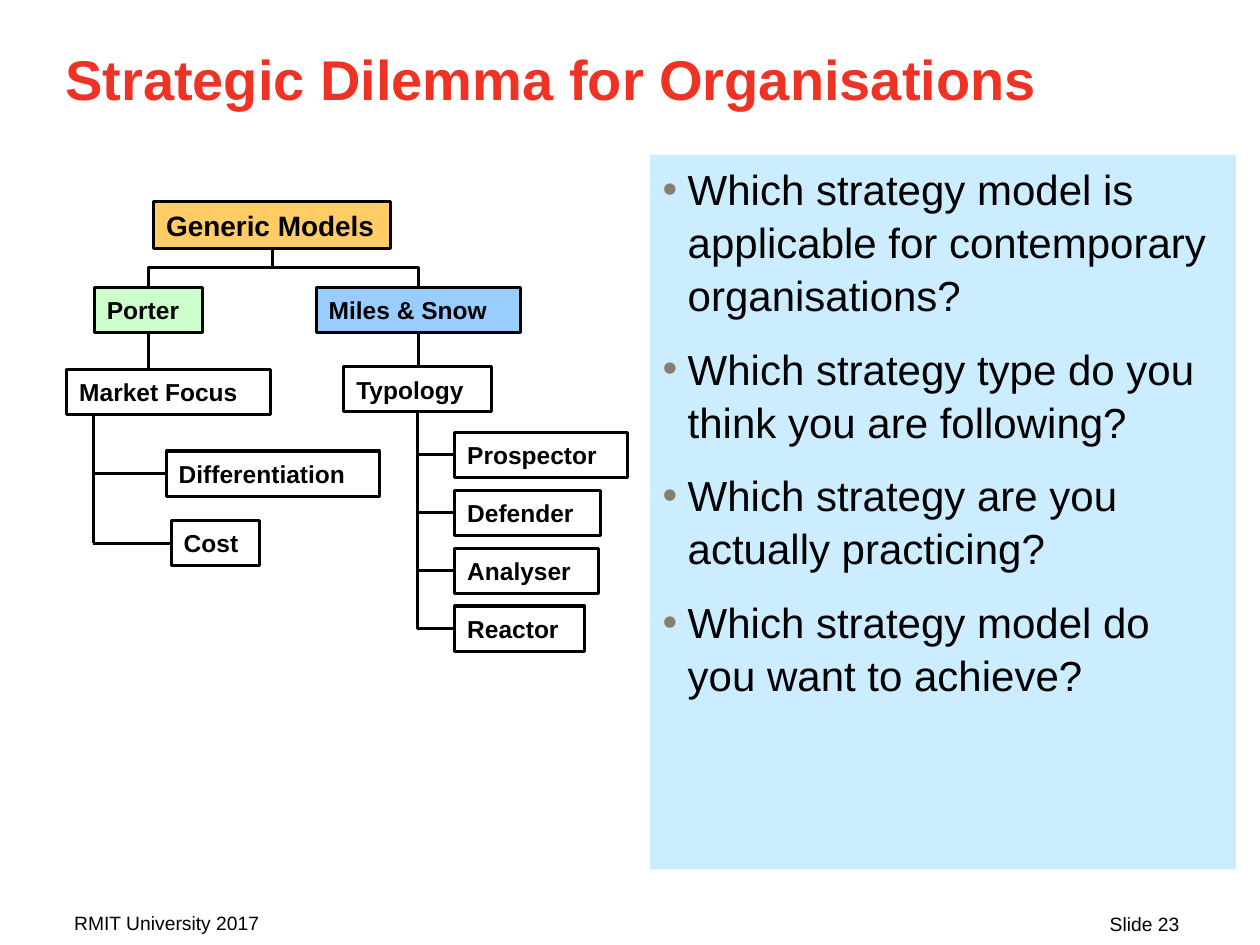
from lxml import etree
from pptx import Presentation
from pptx.dml.color import RGBColor
from pptx.enum.shapes import MSO_CONNECTOR, MSO_SHAPE
from pptx.enum.text import MSO_ANCHOR, PP_ALIGN
from pptx.oxml.ns import qn
from pptx.util import Inches, Pt

STRAIGHT, ELBOW = MSO_CONNECTOR.STRAIGHT, MSO_CONNECTOR.ELBOW
RECTANGLE = MSO_SHAPE.RECTANGLE
TOP, MIDDLE = MSO_ANCHOR.TOP, MSO_ANCHOR.MIDDLE
LEFT, RIGHT = PP_ALIGN.LEFT, PP_ALIGN.RIGHT
TOP_SITE, LEFT_SITE, BOTTOM_SITE = 0, 1, 2

BLACK = RGBColor(0x00, 0x00, 0x00)
WHITE = RGBColor(0xFF, 0xFF, 0xFF)
RED = RGBColor(0xEE, 0x32, 0x24)
ORANGE = RGBColor(0xFF, 0xCC, 0x66)
GREEN = RGBColor(0xCC, 0xFF, 0xCC)
BLUE = RGBColor(0x99, 0xCC, 0xFF)
PALE_BLUE = RGBColor(0xCC, 0xEC, 0xFF)
BULLET_GREY = RGBColor(0x88, 0x7E, 0x6E)

QUESTIONS = [
    "Which strategy model is applicable for contemporary organisations?",
    "Which strategy type do you think you are following?",
    "Which strategy are you actually practicing?",
    "Which strategy model do you want to achieve?",
]
TYPES = [("Prospector", 1.37), ("Defender", 1.16), ("Analyser", 1.14), ("Reactor", 1.03)]
FOCUSES = [("Differentiation", 1.32, 3.58, 1.69), ("Cost", 1.36, 4.13, 0.7)]
BOX_HEIGHT = 0.36
TRUNK_X = 0.74


def write(para, text, size=14, color=BLACK, bold=False, align=LEFT):
    """Put formatted text into a paragraph."""
    para.alignment = align
    para.font.name = "Arial"
    para.font.size = Pt(size)
    para.font.bold = bold
    para.font.color.rgb = color
    para.add_run().text = text


def add_label(page, text, left, top, width, height, **text_format):
    """Add a plain text box."""
    frame = page.shapes.add_textbox(
        Inches(left), Inches(top), Inches(width), Inches(height)).text_frame
    frame.word_wrap = True
    write(frame.paragraphs[0], text, **text_format)


def add_rectangle(page, left, top, width, height, fill, anchor):
    """Add a filled rectangle without line or shadow."""
    box = page.shapes.add_shape(
        RECTANGLE, Inches(left), Inches(top), Inches(width), Inches(height))
    box.shadow.inherit = False
    box.fill.solid()
    box.fill.fore_color.rgb = fill
    box.line.fill.background()
    box.text_frame.word_wrap = True
    box.text_frame.vertical_anchor = anchor
    return box


def add_node(page, text, left, top, width, height=BOX_HEIGHT, fill=WHITE, size=14):
    """Add an outlined box of the tree."""
    box = add_rectangle(page, left, top, width, height, fill, MIDDLE)
    box.line.color.rgb = BLACK
    box.line.width = Pt(1.75)
    box.text_frame.margin_right = 0
    write(box.text_frame.paragraphs[0], text, size=size, bold=True)
    return box


def style_connector(connector):
    """Give a connector the tree's line and no shadow."""
    connector.line.color.rgb = BLACK
    connector.line.width = Pt(1.75)
    etree.SubElement(connector._element.spPr, qn("a:effectLst"))


def add_line(page, start_x, start_y, end_x, end_y):
    """Add a straight line."""
    style_connector(page.shapes.add_connector(
        STRAIGHT, Inches(start_x), Inches(start_y), Inches(end_x), Inches(end_y)))


def add_elbow(page, parent, child, site):
    """Join a parent's bottom to a child with a bend that starts downwards."""
    connector = page.shapes.add_connector(ELBOW, 0, 0, 0, 0)
    connector.begin_connect(parent, BOTTOM_SITE)
    connector.end_connect(child, site)
    start_x, start_y = parent.left + parent.width // 2, parent.top + parent.height
    end_x, end_y = child.left, child.top
    if site == TOP_SITE:
        end_x += child.width // 2
    else:
        end_y += child.height // 2
        connector._element.spPr.find(qn("a:prstGeom")).set("prst", "bentConnector2")
    run, drop = abs(end_x - start_x), end_y - start_y
    connector.left = (start_x + end_x - drop) // 2
    connector.top = (start_y + end_y - run) // 2
    connector.width, connector.height = drop, run
    transform = connector._element.spPr.find(qn("a:xfrm"))
    transform.set("rot", str(90 * 60000))
    transform.set("flipH", "0")
    transform.set("flipV", "1" if end_x > start_x else "0")
    style_connector(connector)


def add_bullet(para):
    """Give a paragraph a hanging grey bullet."""
    properties = para._p.get_or_add_pPr()
    properties.set("marL", str(Inches(0.2)))
    properties.set("indent", str(-Inches(0.2)))
    color = etree.SubElement(properties, qn("a:buClr"))
    etree.SubElement(color, qn("a:srgbClr")).set("val", str(BULLET_GREY))
    etree.SubElement(properties, qn("a:buFont")).set("typeface", "Arial")
    etree.SubElement(properties, qn("a:buChar")).set("char", "•")


def add_questions(page):
    """Add the panel of questions."""
    frame = add_rectangle(page, 5.16, 1.23, 4.65, 5.67, PALE_BLUE, TOP).text_frame
    for index, question in enumerate(QUESTIONS):
        para = frame.add_paragraph() if index else frame.paragraphs[0]
        add_bullet(para)
        para.line_spacing = 1.05
        para.space_before = Pt(12 if index else 0)
        write(para, question, size=24)


def add_tree(page):
    """Add the tree of generic models."""
    root = add_node(page, "Generic Models", 1.22, 1.6, 1.88, 0.37, ORANGE, 16)
    porter = add_node(page, "Porter", 0.75, 2.28, 0.86, fill=GREEN)
    miles = add_node(page, "Miles & Snow", 2.51, 2.28, 1.62, fill=BLUE)
    for model in (porter, miles):
        add_elbow(page, root, model, TOP_SITE)

    add_line(page, 1.18, 2.64, 1.18, 2.93)
    add_node(page, "Market Focus", 0.53, 2.93, 1.62)
    for text, left, top, width in FOCUSES:
        add_node(page, text, left, top, width)
        add_line(page, TRUNK_X, top + BOX_HEIGHT / 2, left, top + BOX_HEIGHT / 2)
    add_line(page, TRUNK_X, 3.29, TRUNK_X, 4.31)

    add_line(page, 3.32, 2.64, 3.32, 2.91)
    typology = add_node(page, "Typology", 2.73, 2.91, 1.17)
    for index, (text, width) in enumerate(TYPES):
        kind = add_node(page, text, 3.61, 3.43 + 0.46 * index, width)
        add_elbow(page, typology, kind, LEFT_SITE)


def main():
    """Build and save the slide."""
    deck = Presentation()
    deck.slide_width, deck.slide_height = Inches(10), Inches(7.5)
    page = deck.slides.add_slide(deck.slide_layouts[6])
    add_label(page, "Strategic Dilemma for Organisations", 0.42, 0.3, 9, 1.01,
              size=32, color=RED, bold=True)
    add_tree(page)
    add_questions(page)
    add_label(page, "RMIT University 2017", 0.49, 7.18, 2.33, 0.24, size=11)
    add_label(page, "Slide 23", 7.13, 7.19, 2.33, 0.24, size=11, align=RIGHT)
    deck.save("out.pptx")


if __name__ == "__main__":
    main()
